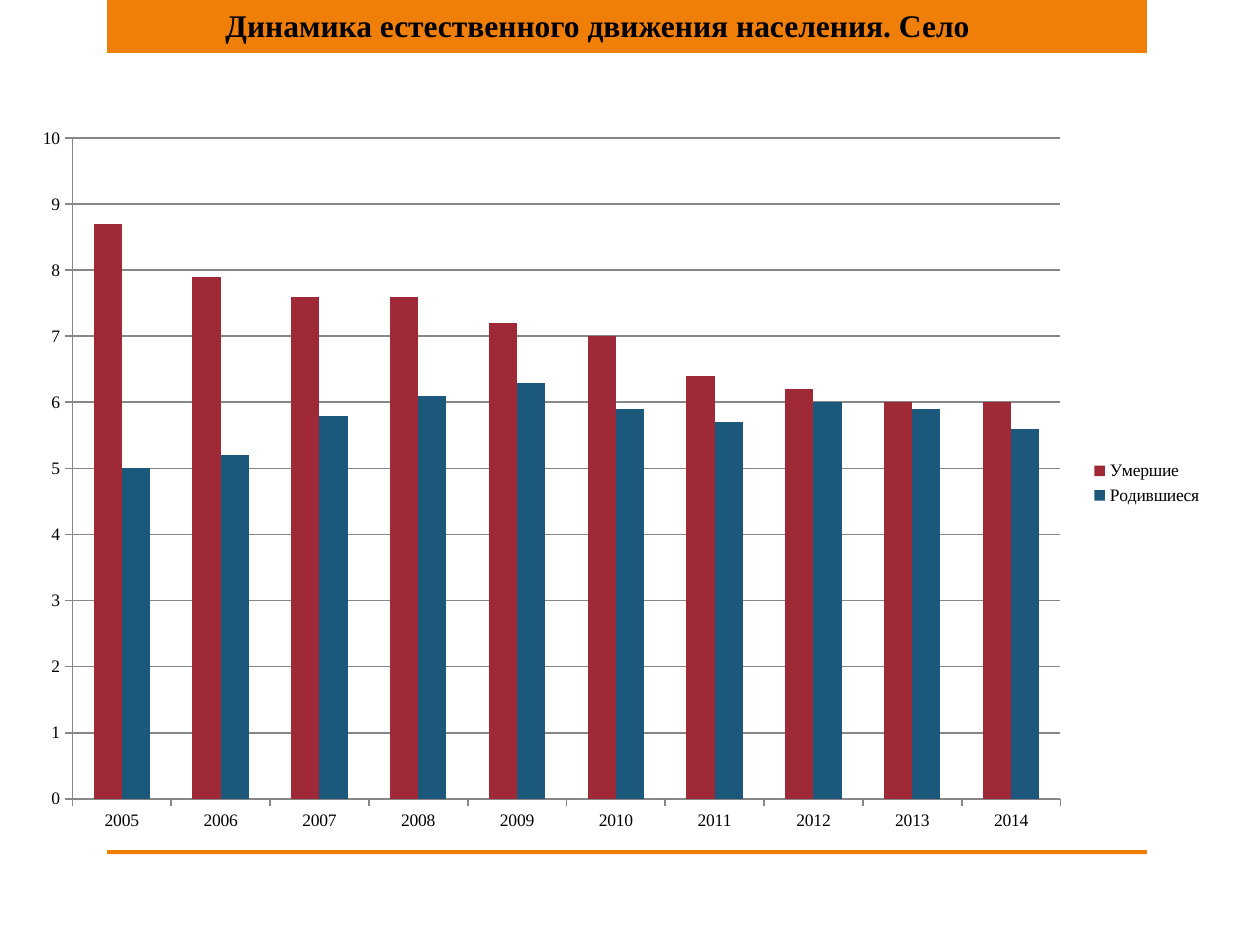
from lxml import etree
from pptx import Presentation
from pptx.chart.data import CategoryChartData
from pptx.dml.color import RGBColor
from pptx.enum import chart as charts, shapes, text
from pptx.oxml.ns import qn
from pptx.util import Cm, Pt

# Content
TITLE = "Динамика естественного движения населения. Село"
YEARS = [str(year) for year in range(2005, 2015)]
SERIES = {
    "Умершие": (8.7, 7.9, 7.6, 7.6, 7.2, 7, 6.4, 6.2, 6, 6),
    "Родившиеся": (5, 5.2, 5.8, 6.1, 6.3, 5.9, 5.7, 6, 5.9, 5.6),
}

# Colours and type
THEME = {
    "font": "Times New Roman",
    "title_size": Pt(18),
    "chart_size": Pt(10),
    "ink": RGBColor.from_string("000000"),
    "paper": RGBColor.from_string("FFFFFF"),
    "accent": RGBColor.from_string("F07F09"),
    "grid": RGBColor.from_string("878787"),
    "series": [RGBColor.from_string(c) for c in ("9F2936", "1B587C")],
}

# Places: left, top, width, height in centimetres
BAND_LEFT, BAND_WIDTH = 2.16, 20.96
BANDS = [(BAND_LEFT, 0, BAND_WIDTH, 1.07), (BAND_LEFT, 17.14, BAND_WIDTH, 0.08)]
TITLE_PLACE = (4.29, 0, 15.75, 1.02)
CHART_PLACE = (0.5, 2.34, 24, 14.8)
PLOT_SHARE = {"x": 0.04, "y": 0.03, "w": 0.83, "h": 0.9}


def lengths(place):
    return [Cm(value) for value in place]


def style_font(font, size):
    font.name = THEME["font"]
    font.size = size
    font.color.rgb = THEME["ink"]


def add_band(page, place):
    band = page.shapes.add_shape(shapes.MSO_SHAPE.RECTANGLE, *lengths(place))
    band.shadow.inherit = False
    band.fill.solid()
    band.fill.fore_color.rgb = THEME["accent"]
    band.line.fill.background()


def place_title(page):
    box = page.shapes.title
    box.left, box.top, box.width, box.height = lengths(TITLE_PLACE)
    frame = box.text_frame
    frame.text = TITLE
    frame.word_wrap = True
    frame.auto_size = text.MSO_AUTO_SIZE.SHAPE_TO_FIT_TEXT
    frame.vertical_anchor = text.MSO_ANCHOR.TOP
    para = frame.paragraphs[0]
    para.alignment = text.PP_ALIGN.LEFT
    span = para.runs[0]
    style_font(span.font, THEME["title_size"])
    span.font.bold = True
    page.shapes.element.append(box.element)  # in front of the bands


def fix_plot_area(chart):
    area = chart.element.find(".//" + qn("c:plotArea"))
    layout = area.find(qn("c:layout"))
    if layout is None:
        layout = etree.Element(qn("c:layout"))
        area.insert(0, layout)
    manual = etree.SubElement(layout, qn("c:manualLayout"))
    settings = {"layoutTarget": "inner", "xMode": "edge", "yMode": "edge", **PLOT_SHARE}
    for name, value in settings.items():
        etree.SubElement(manual, qn("c:" + name)).set("val", str(value))


def add_population_chart(page):
    data = CategoryChartData()
    data.categories = YEARS
    for name, values in SERIES.items():
        data.add_series(name, values)
    chart = page.shapes.add_chart(
        charts.XL_CHART_TYPE.COLUMN_CLUSTERED, *lengths(CHART_PLACE), data
    ).chart
    style_font(chart.font, THEME["chart_size"])
    chart.has_title = False
    fix_plot_area(chart)

    # Columns
    plot = chart.plots[0]
    plot.vary_by_categories = False
    plot.gap_width, plot.overlap = 150, 0
    for series, color in zip(plot.series, THEME["series"]):
        series.format.fill.solid()
        series.format.fill.fore_color.rgb = color

    # Axes and grid
    scale = chart.value_axis
    scale.minimum_scale, scale.maximum_scale, scale.major_unit = 0, 10, 1
    scale.has_major_gridlines = True
    for axis in (scale, chart.category_axis):
        axis.major_tick_mark = charts.XL_TICK_MARK.OUTSIDE
    for part in (scale, chart.category_axis, scale.major_gridlines):
        part.format.line.color.rgb = THEME["grid"]
        part.format.line.width = Pt(1)

    # Legend
    chart.has_legend = True
    chart.legend.position = charts.XL_LEGEND_POSITION.RIGHT
    chart.legend.include_in_layout = False


def main():
    deck = Presentation()
    deck.slide_width, deck.slide_height = Cm(25.4), Cm(19.05)
    page = deck.slides.add_slide(deck.slide_layouts[5])
    page.background.fill.solid()
    page.background.fill.fore_color.rgb = THEME["paper"]
    for place in BANDS:
        add_band(page, place)
    place_title(page)
    add_population_chart(page)
    deck.save("out.pptx")


if __name__ == "__main__":
    main()
